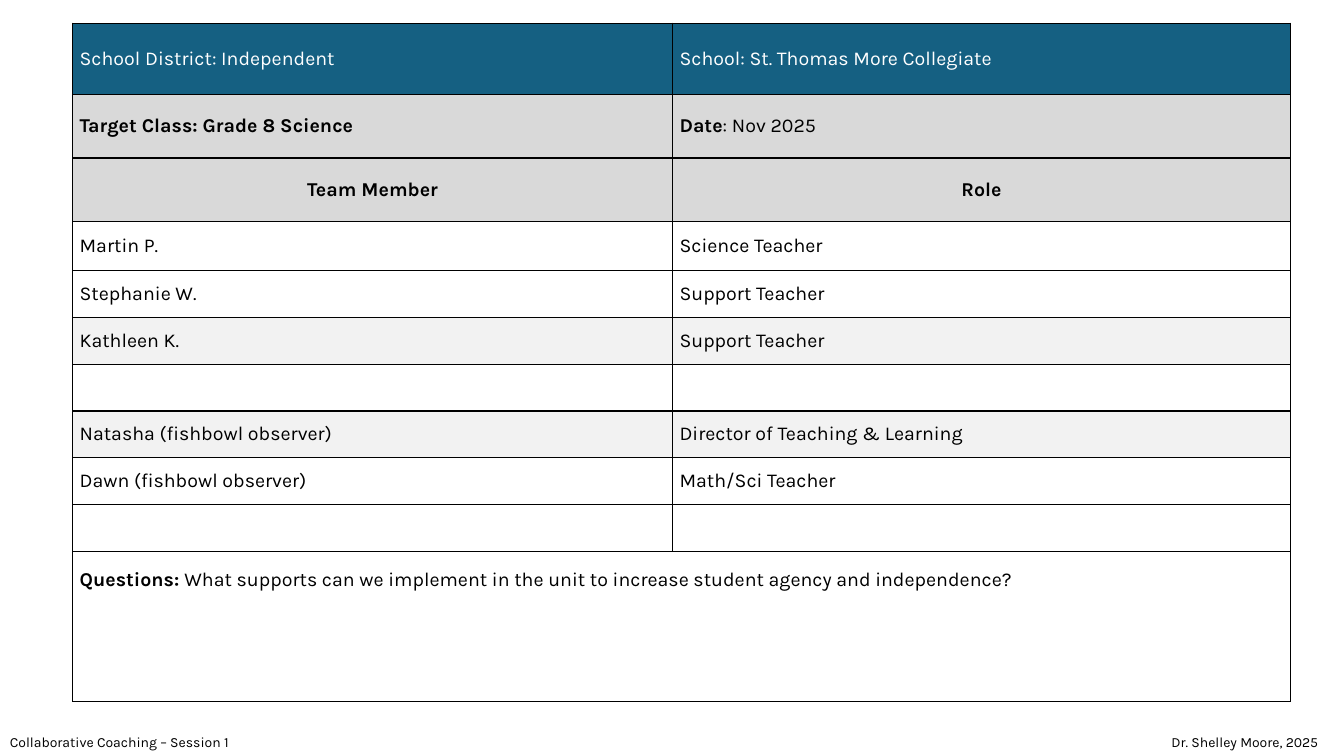
from lxml.etree import SubElement
from pptx import Presentation
from pptx.dml.color import RGBColor as RGB
from pptx.enum.text import MSO_ANCHOR as ANCHOR, PP_ALIGN as ALIGN
from pptx.oxml.ns import qn
from pptx.util import Inches as In, Pt

FONT = "Karla"
COLORS = {"header": "156082", "label": "D9D9D9", "band": "F2F2F2",
          "plain": "FFFFFF", "ink": "000000"}
COLS = [5.95, 6.13]
# Row height, fill, and the runs of each cell as (text, bold)
ROWS = [
    (0.71, "header", [[("School District: Independent", False)],
                      [("School: St. Thomas More Collegiate", False)]]),
    (0.63, "label", [[("Target Class: Grade 8 Science", True)],
                     [("Date", True), (": Nov 2025", False)]]),
    (0.63, "label", [[("Team Member", True)], [("Role", True)]]),
    (0.49, "plain", [[("Martin P.", False)], [("Science Teacher", False)]]),
    (0.465, "plain", [[("Stephanie W.", False)], [("Support Teacher", False)]]),
    (0.465, "band", [[("Kathleen K.", False)], [("Support Teacher", False)]]),
    (0.465, "plain", [[], []]),
    (0.465, "band", [[("Natasha (fishbowl observer)", False)],
                     [("Director of Teaching & Learning", False)]]),
    (0.465, "plain", [[("Dawn (fishbowl observer)", False)],
                      [("Math/Sci Teacher", False)]]),
    (0.465, "plain", [[], []]),
    (1.49, "plain", [[("Questions: ", True),
                      ("What supports can we implement in the unit to increase "
                       "student agency and independence?", False)], []]),
]
TITLES_ROW = 2


def style_font(font, size, color):
    font.name, font.size = FONT, Pt(size)
    font.color.rgb = RGB.from_string(COLORS[color])


def add_borders(cell):
    tcPr = cell._tc.get_or_add_tcPr()
    for i, side in enumerate(("lnL", "lnR", "lnT", "lnB")):
        ln = tcPr.makeelement(qn(f"a:{side}"), {"w": str(Pt(1))})
        fill = SubElement(ln, qn("a:solidFill"))
        SubElement(fill, qn("a:srgbClr"), val=COLORS["ink"])
        tcPr.insert(i, ln)


def fill_cell(cell, runs, fill):
    cell.fill.solid()
    cell.fill.fore_color.rgb = RGB.from_string(COLORS[fill])
    add_borders(cell)
    cell.vertical_anchor = ANCHOR.MIDDLE
    cell.margin_left = cell.margin_right = In(0.07)
    cell.margin_top = cell.margin_bottom = In(0.04)
    p = cell.text_frame.paragraphs[0]
    style_font(p.font, 14, "plain" if fill == "header" else "ink")
    for text, bold in runs:
        r = p.add_run()
        r.text = text
        style_font(r.font, 14, "plain" if fill == "header" else "ink")
        r.font.bold = bold


def add_team_table(s, left, top, width, height):
    """Share the box among columns and rows by their weights."""
    table = s.shapes.add_table(len(ROWS), len(COLS), left, top, width, height).table
    table.first_row = table.horz_banding = False
    for col, share in zip(table.columns, COLS):
        col.width = int(width * share / sum(COLS))
    total = sum(row[0] for row in ROWS)
    for i, (share, fill, cells) in enumerate(ROWS):
        table.rows[i].height = int(height * share / total)
        for j, runs in enumerate(cells):
            fill_cell(table.cell(i, j), runs, fill)
    for cell in table.rows[TITLES_ROW].cells:
        cell.text_frame.paragraphs[0].alignment = ALIGN.CENTER
    last = len(ROWS) - 1
    questions = table.cell(last, 0)
    questions.merge(table.cell(last, len(COLS) - 1))
    questions.vertical_anchor = ANCHOR.TOP
    questions.margin_top = In(0.17)


def add_footer(s, text, left, top, width, height):
    tf = s.shapes.add_textbox(left, top, width, height).text_frame
    tf.word_wrap = True
    p = tf.paragraphs[0]
    p.text = text
    style_font(p.font, 10, "ink")


def main():
    prs = Presentation()
    prs.slide_width, prs.slide_height = In(13.33), In(7.5)
    s = prs.slides.add_slide(prs.slide_layouts[6])
    add_team_table(s, In(0.72), In(0.23), In(12.08), In(6.73))
    footer_h = In(0.27)
    footer_top = prs.slide_height - footer_h
    right = In(11.52)
    add_footer(s, "Collaborative Coaching – Session 1", 0, footer_top, In(2.91), footer_h)
    add_footer(s, "Dr. Shelley Moore, 2025", right, footer_top,
               prs.slide_width - right, footer_h)
    prs.save("out.pptx")


if __name__ == "__main__":
    main()
